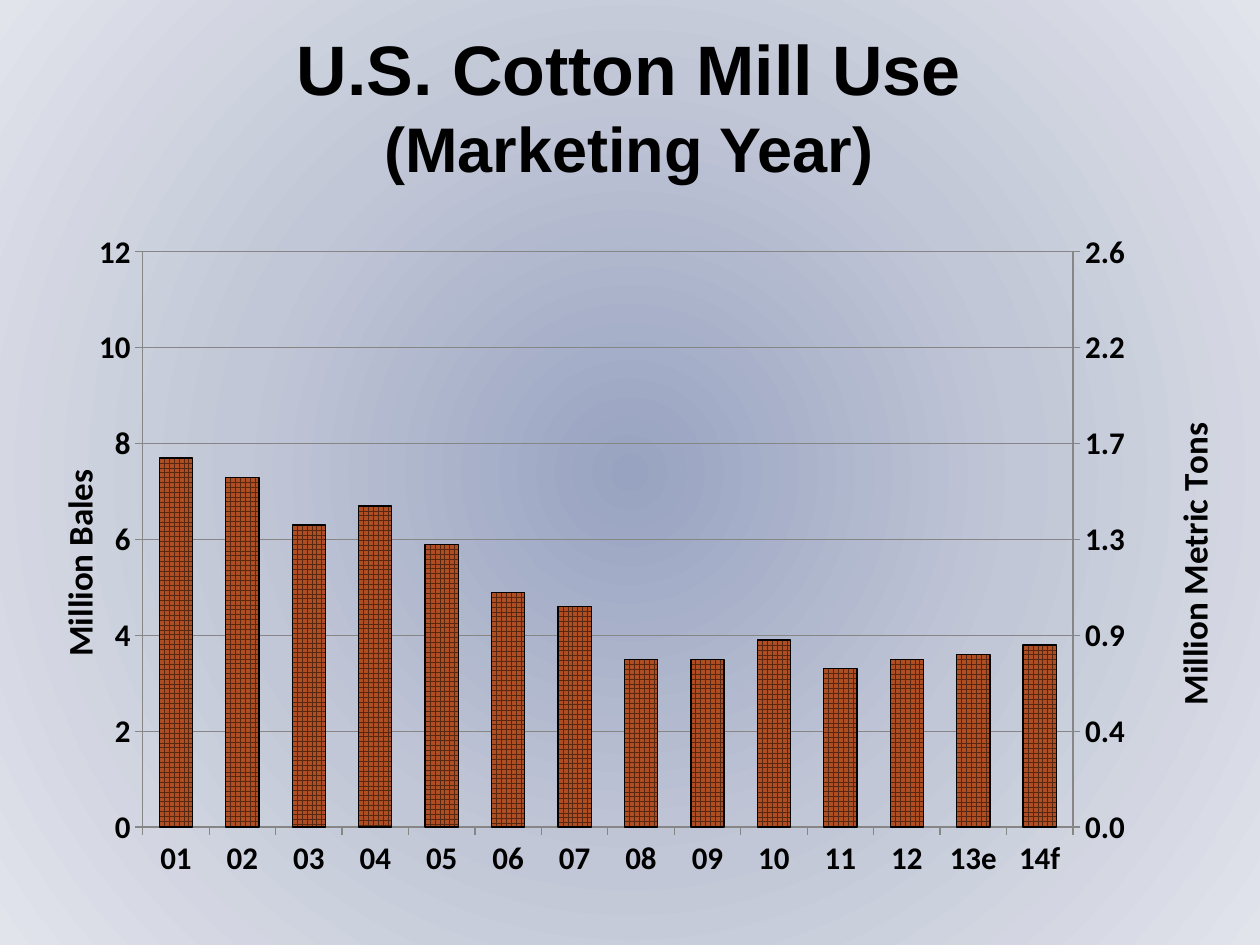
from copy import deepcopy
from dataclasses import dataclass

from pptx import Presentation
from pptx import util as u
from pptx.chart import axis as axes
from pptx.chart import data as chart_data
from pptx.dml.color import RGBColor
from pptx.enum import chart as kinds, dml, text
from pptx.oxml import parse_xml
from pptx.oxml.ns import nsdecls, qn


@dataclass(frozen=True)
class Theme:
    heading: str = "Arial"
    body: str = "Calibri"
    ink: str = "000000"
    rule: str = "868686"
    bar: str = "AE4E22"
    mesh: str = "572711"
    backdrop: tuple = ((0, "98A3C1"), (50, "C2C7D7"), (100, "E1E4EB"))
    label_size: int = 18
    axis_title_size: int = 20
    thin: float = 0.75


THEME = Theme()
PX = u.Inches(1) // 126
SLIDE = (1260, 945)
TITLE_BOX = (31, 42, 1196, 126)
CHART_BOX = (31, 147, 1196, 755)
PLOT = {"x": 0.095, "y": 0.139, "w": 0.791, "h": 0.762}

HEADING = [("U.S. Cotton Mill Use", 40), ("(Marketing Year)", 36)]
YEARS = ["01", "02", "03", "04", "05", "06", "07", "08", "09", "10", "11", "12", "13e", "14f"]
SERIES = {
    "Series 1": [7.7, 7.3, 6.3, 6.7, 5.9, 4.9, 4.6, 3.5, 3.5, 3.9, 3.3, 3.5, 3.6, 3.8],
    "Series 2": [1.68, 1.58, 1.37, 1.46, 1.28, 1.08, 1, 0.77, 0.77, 0.85, 0.72, 0.76, 0.78, 0.83],
}
BALES_PER_TON = 4.59
LEFT_AXIS = dict(title="Million Bales", top=12, step=2, number_format="0",
                 spot={"x": 0.015, "y": 0.415})
RIGHT_AXIS = dict(title="Million Metric Tons", top=12 / BALES_PER_TON, step=2 / BALES_PER_TON,
                  number_format="#,##0.0", spot={"x": 0.963, "y": 0.351})


def rgb(value):
    return RGBColor.from_string(value)


def px(box):
    return [u.Emu(length * PX) for length in box]


def style(font, size, name):
    font.size, font.name, font.bold = u.Pt(size), name, True
    font.color.rgb = rgb(THEME.ink)


def rule(line, color):
    line.color.rgb = rgb(color)
    line.width = u.Pt(THEME.thin)


def manual_layout(place, target=""):
    modes = "".join(f'<c:{key}Mode val="edge"/>' for key in "xy")
    values = "".join(f'<c:{key} val="{value}"/>' for key, value in place.items())
    return parse_xml(f'<c:layout {nsdecls("c")}><c:manualLayout>{target}{modes}{values}'
                     "</c:manualLayout></c:layout>")


def paint_background(slide):
    slide.background.fill.gradient()
    old = slide.element.find(".//" + qn("a:gradFill"))
    stops = "".join(f'<a:gs pos="{pos * 1000}"><a:srgbClr val="{color}"/></a:gs>'
                    for pos, color in THEME.backdrop)
    old.getparent().replace(old, parse_xml(
        f'<a:gradFill {nsdecls("a")} rotWithShape="1"><a:gsLst>{stops}</a:gsLst>'
        '<a:path path="circle"><a:fillToRect l="50000" t="50000" r="50000" b="50000"/></a:path>'
        "</a:gradFill>"))


def add_heading(slide):
    frame = slide.shapes.add_textbox(*px(TITLE_BOX)).text_frame
    frame.word_wrap = True
    frame.vertical_anchor = text.MSO_ANCHOR.MIDDLE
    for index, (words, size) in enumerate(HEADING):
        para = frame.add_paragraph() if index else frame.paragraphs[0]
        para.alignment = text.PP_ALIGN.CENTER
        span = para.add_run()
        span.text = words
        style(span.font, size, THEME.heading)


def set_value_axis(axis, title, top, step, number_format, spot):
    axis.minimum_scale, axis.maximum_scale, axis.major_unit = 0, top, step
    axis.major_tick_mark = kinds.XL_TICK_MARK.OUTSIDE
    axis.tick_labels.number_format = number_format
    axis.tick_labels.number_format_is_linked = False
    rule(axis.format.line, THEME.rule)
    frame = axis.axis_title.text_frame
    span = frame.paragraphs[0].add_run()
    span.text = title
    style(span.font, THEME.axis_title_size, THEME.body)
    body = axis.axis_title._element.find(".//" + qn("a:bodyPr"))
    body.set("rot", "-5400000")
    body.set("vert", "horz")
    layout = axis.axis_title._element.find(qn("c:layout"))
    layout.getparent().replace(layout, manual_layout(spot))


def add_right_axis(plot_area):
    bars, category, value = (plot_area.find(qn(f"c:{tag}")) for tag in ("barChart", "catAx", "valAx"))
    right_bars, right_category, right_value = map(deepcopy, (bars, category, value))
    bars.remove(bars.findall(qn("c:ser"))[1])
    right_bars.remove(right_bars.findall(qn("c:ser"))[0])
    bars.addnext(right_bars)
    value.addnext(right_value)
    right_value.addnext(right_category)
    ids = {category.find(qn("c:axId")).get("val"): "5001", value.find(qn("c:axId")).get("val"): "5002"}
    for part in (right_bars, right_category, right_value):
        for tag in ("axId", "crossAx"):
            for node in part.findall(qn(f"c:{tag}")):
                node.set("val", ids[node.get("val")])
    right_value.find(qn("c:axPos")).set("val", "r")
    right_value.find(qn("c:crosses")).set("val", "max")
    axes.CategoryAxis(right_category).visible = False
    right_axis = axes.ValueAxis(right_value)
    right_axis.has_major_gridlines = False
    return right_axis


def add_mill_use_chart(slide):
    data = chart_data.CategoryChartData()
    data.categories = YEARS
    for name, values in SERIES.items():
        data.add_series(name, values)
    chart = slide.shapes.add_chart(kinds.XL_CHART_TYPE.COLUMN_STACKED, *px(CHART_BOX), data).chart
    chart.has_legend = chart.has_title = False
    style(chart.font, THEME.label_size, THEME.body)

    plot = chart.plots[0]
    plot.gap_width, plot.overlap, plot.vary_by_categories = 100, 100, False
    bales, tons = plot.series
    fill = bales.format.fill
    fill.patterned()
    fill.pattern = dml.MSO_PATTERN.LARGE_GRID
    fill.fore_color.rgb, fill.back_color.rgb = rgb(THEME.mesh), rgb(THEME.bar)
    rule(bales.format.line, THEME.ink)
    tons.format.fill.background()
    tons.format.line.fill.background()

    years = chart.category_axis
    years.major_tick_mark = kinds.XL_TICK_MARK.OUTSIDE
    years.tick_label_position = kinds.XL_TICK_LABEL_POSITION.LOW
    rule(years.format.line, THEME.rule)

    left_axis = chart.value_axis
    plot_area = chart.element.find(".//" + qn("c:plotArea"))
    right_axis = add_right_axis(plot_area)
    left_axis.has_major_gridlines = True
    rule(left_axis.major_gridlines.format.line, THEME.rule)
    set_value_axis(left_axis, **LEFT_AXIS)
    set_value_axis(right_axis, **RIGHT_AXIS)

    for layout in plot_area.findall(qn("c:layout")):
        plot_area.remove(layout)
    plot_area.insert(0, manual_layout(PLOT, '<c:layoutTarget val="inner"/>'))


def main():
    deck = Presentation()
    deck.slide_width, deck.slide_height = px(SLIDE)
    page = deck.slides.add_slide(deck.slide_layouts[6])
    paint_background(page)
    add_heading(page)
    add_mill_use_chart(page)
    deck.save("out.pptx")


if __name__ == "__main__":
    main()
